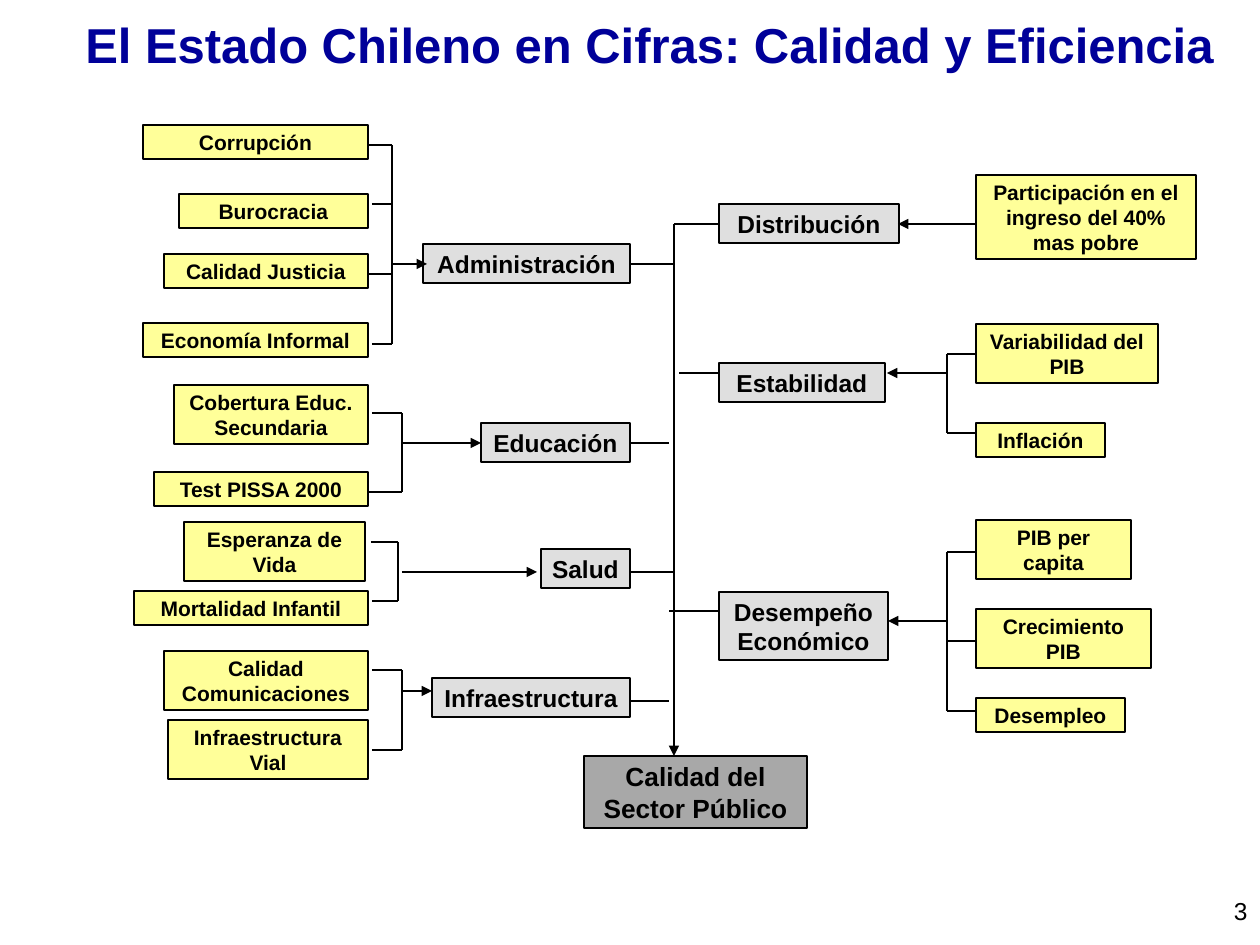
import pptx
import pptx.util
import pptx.dml.color
import pptx.enum.shapes
import pptx.enum.text
import pptx.oxml
import pptx.oxml.ns

PX = 914400 / 126
color = pptx.dml.color.RGBColor.from_string
Pt = pptx.util.Pt
ALIGN = pptx.enum.text.PP_ALIGN
ANCHOR = pptx.enum.text.MSO_ANCHOR
NS = 'xmlns:a="http://schemas.openxmlformats.org/drawingml/2006/main"'

presentation = pptx.Presentation()
presentation.slide_width = round(1260 * PX)
presentation.slide_height = round(945 * PX)
slide = presentation.slides.add_slide(presentation.slide_layouts[5])

FRAME = {
    "word_wrap": True,
    "vertical_anchor": ANCHOR.MIDDLE,
    "margin_left": round(8 * PX),
    "margin_right": round(8 * PX),
    "margin_top": round(4 * PX),
    "margin_bottom": round(4 * PX),
}


def add_box(text, left, top, width, height, fill, size, opacity=100):
    shape = slide.shapes.add_shape(
        pptx.enum.shapes.MSO_SHAPE.RECTANGLE,
        *(round(value * PX) for value in (left, top, width, height)))
    shape.shadow.inherit = False
    shape.fill.solid()
    shape.fill.fore_color.rgb = color(fill)
    if opacity < 100:
        fill_color = shape._element.spPr.find(".//" + pptx.oxml.ns.qn("a:srgbClr"))
        fill_color.append(pptx.oxml.parse_xml(f'<a:alpha {NS} val="{opacity * 1000}"/>'))
    shape.line.color.rgb = color("000000")
    shape.line.width = Pt(0.75)
    for name, value in FRAME.items():
        setattr(shape.text_frame, name, value)
    shape.text_frame.text = text
    for paragraph in shape.text_frame.paragraphs:
        paragraph.alignment = ALIGN.CENTER
        paragraph.font.color.rgb = color("000000")
        for name, value in {"name": "Arial", "size": Pt(size), "bold": True}.items():
            setattr(paragraph.font, name, value)


def add_line(x1, y1, x2, y2, arrow=False):
    line = slide.shapes.add_connector(
        pptx.enum.shapes.MSO_CONNECTOR.STRAIGHT,
        *(round(value * PX) for value in (x1, y1, x2, y2)))
    line.line.color.rgb = color("000000")
    line.line.width = Pt(0.75)
    if arrow:
        line.line._get_or_add_ln().append(
            pptx.oxml.parse_xml(f'<a:tailEnd {NS} type="triangle"/>'))
    line._element.spPr.append(pptx.oxml.parse_xml(f"<a:effectLst {NS}/>"))


# Title and page number
title = slide.shapes.title
page_number = slide.shapes.add_textbox(0, 0, 0, 0)
texts = [
    (title, "El Estado Chileno en Cifras: Calidad y Eficiencia", (64, 0, 1171, 87),
     "000099", ALIGN.CENTER, ANCHOR.MIDDLE, {"size": Pt(28), "bold": True}),
    (page_number, "3", (966, 890, 294, 55),
     "000000", ALIGN.RIGHT, ANCHOR.TOP, {"size": Pt(14), "bold": False}),
]
for shape, text, place, text_color, alignment, anchor, font in texts:
    for name, value in zip(("left", "top", "width", "height"), place):
        setattr(shape, name, round(value * PX))
    frame = shape.text_frame
    frame.text = text
    frame.word_wrap = True
    frame.auto_size = pptx.enum.text.MSO_AUTO_SIZE.NONE
    frame.vertical_anchor = anchor
    paragraph = frame.paragraphs[0]
    paragraph.alignment = alignment
    paragraph.font.name = "Arial"
    paragraph.font.color.rgb = color(text_color)
    for name, value in font.items():
        setattr(paragraph.font, name, value)

# Indicators on the left share a right edge: text, right, top, width, lines
LINE_HEIGHT = 25
left_indicators = [
    ("Corrupción", 368, 125, 225, 1),
    ("Burocracia", 368, 194, 189, 1),
    ("Calidad Justicia", 368, 254, 204, 1),
    ("Economía Informal", 368, 323, 225, 1),
    ("Cobertura Educ. Secundaria", 368, 385, 194, 2),
    ("Test PISSA 2000", 368, 472, 214, 1),
    ("Esperanza de Vida", 365, 522, 181, 2),
    ("Mortalidad Infantil", 368, 591, 234, 1),
    ("Calidad Comunicaciones", 368, 651, 204, 2),
    ("Infraestructura Vial", 368, 720, 200, 2),
]
for text, right, top, width, lines in left_indicators:
    add_box(text, right - width, top, width, 9 + LINE_HEIGHT * lines, "FFFF99", 12)

# Indicators on the right share a left edge: text, top, width, lines
right_indicators = [
    ("Participación en el ingreso del 40% mas pobre", 175, 220, 3),
    ("Variabilidad del PIB", 324, 182, 2),
    ("Inflación", 423, 129, 1),
    ("PIB per capita", 520, 155, 2),
    ("Crecimiento PIB", 609, 175, 2),
    ("Desempleo", 698, 149, 1),
]
for text, top, width, lines in right_indicators:
    add_box(text, 976, top, width, 9 + LINE_HEIGHT * lines, "FFFF99", 12)

# Areas: text, left, top, width, height
areas = [
    ("Administración", 423, 244, 207, 39),
    ("Educación", 481, 423, 149, 39),
    ("Salud", 541, 549, 89, 39),
    ("Infraestructura", 432, 678, 198, 39),
    ("Distribución", 719, 204, 180, 39),
    ("Estabilidad", 719, 363, 166, 39),
    ("Desempeño\nEconómico", 719, 592, 169, 68),
]
for area in areas:
    add_box(*area, "C0C0C0", 14, 50)
add_box("Calidad del\nSector Público", 584, 756, 223, 72, "969696", 15, 82)

# Brackets: spine x, branches (start x, y), arrow (from x, to x, y)
brackets = [
    (392, [(369, 145), (372, 204), (369, 274), (372, 344)], (392, 427, 264)),
    (402, [(372, 413), (368, 492)], (402, 481, 443)),
    (398, [(371, 542), (372, 601)], (402, 537, 572)),
    (402, [(372, 670), (372, 750)], (402, 432, 691)),
    (947, [(976, 354), (976, 433)], (947, 887, 373)),
    (947, [(976, 552), (976, 641), (976, 711)], (947, 888, 621)),
]
for spine, branches, (start, end, y) in brackets:
    add_line(spine, branches[0][1], spine, branches[-1][1])
    for branch, branch_y in branches:
        add_line(branch, branch_y, spine, branch_y)
    add_line(start, y, end, y, arrow=True)
add_line(976, 224, 898, 224, arrow=True)

# Central trunk and the links from each area
add_line(674, 224, 674, 756, arrow=True)
links = [
    (630, 674, 264), (630, 669, 443), (630, 674, 572), (630, 669, 701),
    (719, 674, 224), (719, 679, 373), (719, 669, 611),
]
for start, end, y in links:
    add_line(start, y, end, y)

presentation.save("out.pptx")
